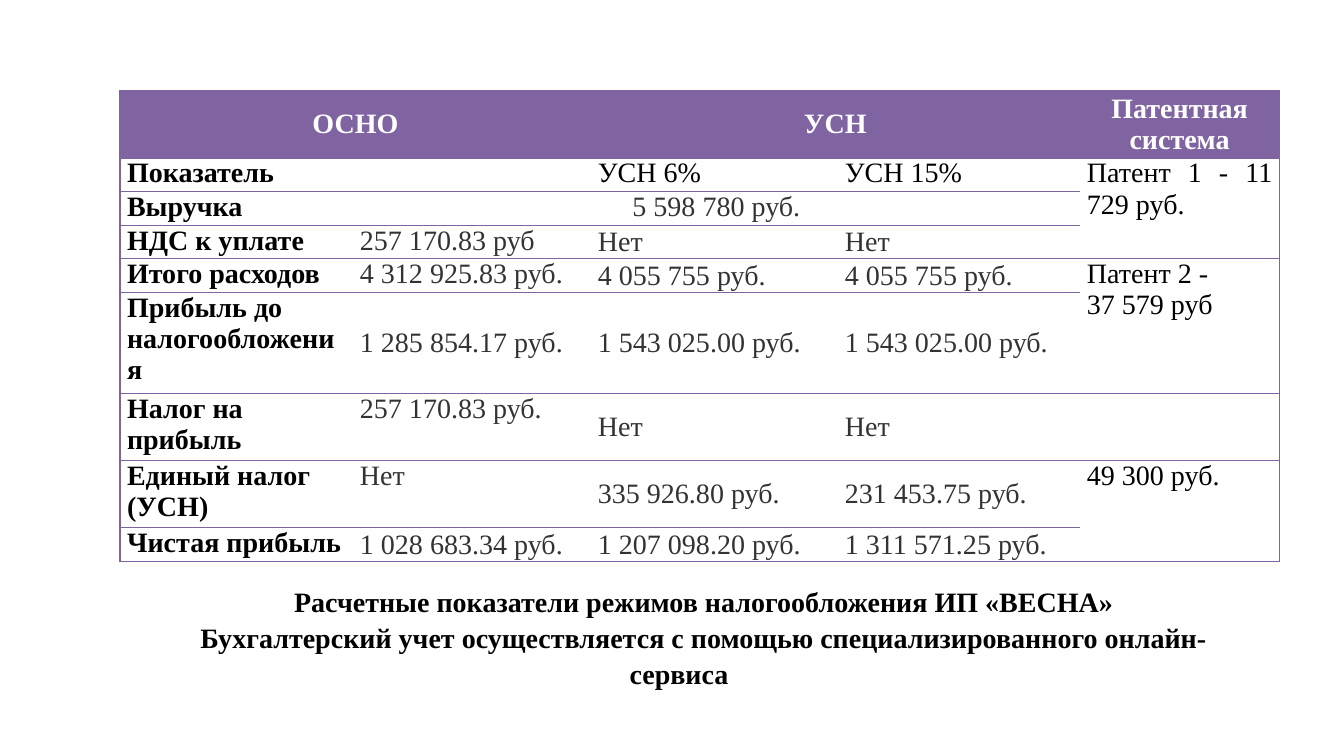
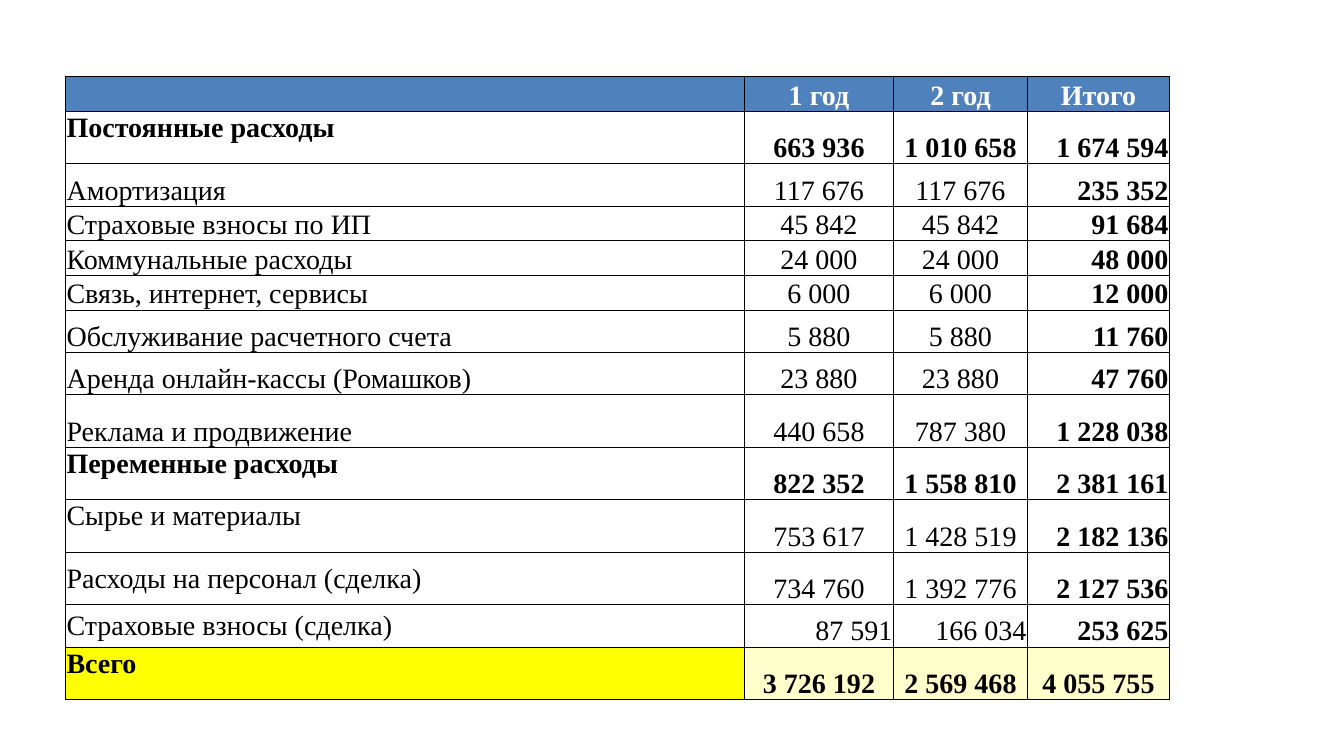
from lxml import etree
from pptx import Presentation
from pptx.dml.color import RGBColor
from pptx.enum.text import MSO_ANCHOR, MSO_AUTO_SIZE, PP_ALIGN
from pptx.oxml.ns import qn
from pptx.util import Inches, Pt

LEFT, CENTER, RIGHT, JUSTIFY = PP_ALIGN.LEFT, PP_ALIGN.CENTER, PP_ALIGN.RIGHT, PP_ALIGN.JUSTIFY
TOP, MIDDLE, BOTTOM = MSO_ANCHOR.TOP, MSO_ANCHOR.MIDDLE, MSO_ANCHOR.BOTTOM
GROW = MSO_AUTO_SIZE.SHAPE_TO_FIT_TEXT

SLIDE_WIDTH, SLIDE_HEIGHT = 13.33, 7.5
FONT, FONT_SIZE = "Times New Roman", 20
PLAIN_STYLE = "{2D5ABB26-0587-4C30-8999-92F81FD0307C}"
COLORS = {
    "white": "FFFFFF",
    "black": "000000",
    "gray": "333333",
    "purple": "8064A2",
    "blue": "4F81BD",
    "yellow": "FFFF00",
    "cream": "FFFFCC",
}

TAX_BOX = (1.19, 0.9, 11.5, 4.67)
TAX_COLUMNS = [2.31, 2.36, 2.45, 2.4, 1.98]
TAX_LINES = [2, 1, 1, 1, 1, 3, 2, 2, 1]
TAX_ROWS = [
    ["ОСНО", "", "УСН", "", "Патентная система"],
    ["Показатель", "", "УСН 6%", "УСН 15%", "Патент 1 - 11 729 руб."],
    ["Выручка", "5 598 780 руб.", "", "", ""],
    ["НДС к уплате", "257 170.83 руб", "Нет", "Нет", ""],
    ["Итого расходов", "4 312 925.83 руб.", "4 055 755 руб.", "4 055 755 руб.",
     "Патент 2 -\n37 579 руб"],
    ["Прибыль до налогообложения", "1 285 854.17 руб.", "1 543 025.00 руб.",
     "1 543 025.00 руб.", ""],
    ["Налог на прибыль", "257 170.83 руб.", "Нет", "Нет", ""],
    ["Единый налог (УСН)", "Нет", "335 926.80 руб.", "231 453.75 руб.", "49 300 руб."],
    ["Чистая прибыль", "1 028 683.34 руб.", "1 207 098.20 руб.", "1 311 571.25 руб.", ""],
]
TAX_MERGES = [
    ((0, 0), (0, 1)),
    ((0, 2), (0, 3)),
    ((1, 0), (1, 1)),
    ((2, 1), (2, 3)),
    ((1, 4), (3, 4)),
    ((4, 4), (5, 4)),
    ((7, 4), (8, 4)),
]
CAPTION_BOX = (0.91, 5.93, 11.65, 0.77)
CAPTION = (
    "Расчетные показатели режимов налогообложения ИП «ВЕСНА»\n"
    "Бухгалтерский учет осуществляется с помощью специализированного онлайн-сервиса"
)

COST_BOX = (0.65, 0.76, 10.95, 6.17)
COST_COLUMNS = [6.74, 1.48, 1.33, 1.41]
COST_HEIGHTS = [0.34, 0.52, 0.42, 0.34, 0.34, 0.34, 0.42, 0.42,
                0.52, 0.52, 0.52, 0.52, 0.42, 0.52]
COST_ROWS = [
    ["", "1 год", "2 год", "Итого"],
    ["Постоянные расходы", "663 936", "1 010 658", "1 674 594"],
    ["Амортизация", "117 676", "117 676", "235 352"],
    ["Страховые взносы по ИП", "45 842", "45 842", "91 684"],
    ["Коммунальные расходы", "24 000", "24 000", "48 000"],
    ["Связь, интернет, сервисы", "6 000", "6 000", "12 000"],
    ["Обслуживание расчетного счета", "5 880", "5 880", "11 760"],
    ["Аренда онлайн-кассы (Ромашков)", "23 880", "23 880", "47 760"],
    ["Реклама и продвижение", "440 658", "787 380", "1 228 038"],
    ["Переменные расходы", "822 352", "1 558 810", "2 381 161"],
    ["Сырье и материалы", "753 617", "1 428 519", "2 182 136"],
    ["Расходы на персонал (сделка)", "734 760", "1 392 776", "2 127 536"],
    ["Страховые взносы (сделка)", "87 591", "166 034", "253 625"],
    ["Всего", "3 726 192", "2 569 468", "4 055 755"],
]
COST_TOTAL = len(COST_ROWS) - 1
COST_GROUPS = (1, 9, COST_TOTAL)


def write(frame, text, color="black", bold=False, align=LEFT, indent=0, spacing=None):
    for index, line in enumerate(text.split("\n")):
        para = frame.add_paragraph() if index else frame.paragraphs[0]
        para.alignment = align
        if spacing:
            para.line_spacing = spacing
        if indent:
            para._p.get_or_add_pPr().set("indent", str(Inches(indent)))
        span = para.add_run()
        span.text = line
        span.font.name = FONT
        span.font.size = Pt(FONT_SIZE)
        span.font.bold = bold
        span.font.color.rgb = RGBColor.from_string(COLORS[color])


def add_borders(cell, sides, color, width):
    properties = cell._tc.get_or_add_tcPr()
    for side in "LRTB":
        if side in sides:
            line = etree.SubElement(properties, qn(f"a:ln{side}"), w=str(Pt(width)))
            fill = etree.SubElement(line, qn("a:solidFill"))
            etree.SubElement(fill, qn("a:srgbClr"), val=COLORS[color])


def set_cell(cell, margins, anchor, fill=None):
    cell.margin_left, cell.margin_top, cell.margin_right, cell.margin_bottom = map(Inches, margins)
    cell.vertical_anchor = anchor
    if fill:
        cell.fill.solid()
        cell.fill.fore_color.rgb = RGBColor.from_string(COLORS[fill])
    else:
        cell.fill.background()


def add_grid(page, box, column_weights, row_weights):
    left, top, width, height = box
    frame = page.shapes.add_table(len(row_weights), len(column_weights), *map(Inches, box))
    table = frame.table
    table.first_row = table.horz_banding = False
    table._tbl.tblPr.find(qn("a:tableStyleId")).text = PLAIN_STYLE
    for column, weight in zip(table.columns, column_weights):
        column.width = Inches(width * weight / sum(column_weights))
    for row, weight in zip(table.rows, row_weights):
        row.height = Inches(height * weight / sum(row_weights))
    return table


def tax_sides(row, column):
    last_column = len(TAX_COLUMNS) - 1
    lined = (0, 3, 5, 8) if column == last_column else (0, 1, 2, 3, 4, 5, 7, 8)
    ends = {start: end[0] for start, end in TAX_MERGES}
    bottom_row = ends.get((row, column), row)
    sides = "L" if column == 0 else "R" if column == last_column else ""
    if row == 0 or row - 1 in lined:
        sides += "T"
    if bottom_row in lined:
        sides += "B"
    return sides


def tax_format(row, column):
    if row == 0:
        return MIDDLE, dict(color="white", bold=True, align=CENTER)
    if column == 0:
        return TOP, dict(bold=True)
    if column == 4:
        return TOP, dict(align=JUSTIFY)
    if row == 1:
        return TOP, {}
    centered = row in (5, 8) or (column > 1 and row > 2)
    return MIDDLE if centered else TOP, dict(color="gray", align=CENTER if row == 2 else LEFT)


def add_tax_table(page, box):
    table = add_grid(page, box, TAX_COLUMNS, TAX_LINES)
    for start, end in TAX_MERGES:
        table.cell(*start).merge(table.cell(*end))
    for row, texts in enumerate(TAX_ROWS):
        for column, text in enumerate(texts):
            cell = table.cell(row, column)
            anchor, style = tax_format(row, column)
            add_borders(cell, tax_sides(row, column), "purple", 1)
            set_cell(cell, (0.07, 0, 0.07, 0), anchor, None if row else "purple")
            if text:
                write(cell.text_frame, text, **style)


def add_caption(page, box):
    frame = page.shapes.add_textbox(*map(Inches, box)).text_frame
    frame.word_wrap = True
    frame.auto_size = GROW
    frame.vertical_anchor = MIDDLE
    write(frame, CAPTION, bold=True, align=CENTER, indent=0.49, spacing=1.07)


def cost_format(row, column):
    anchor, align = BOTTOM, CENTER
    if column == 0:
        raised = row in COST_GROUPS or row == 10
        align = JUSTIFY if raised else LEFT
        anchor = TOP if raised else MIDDLE if row in (11, 12) else BOTTOM
    elif row == 12 or (column == 3 and row not in (0, COST_TOTAL)):
        align = RIGHT
    bold = row == 0 or row in COST_GROUPS or column == 3
    return anchor, dict(color="black" if row else "white", bold=bold, align=align)


def cost_fill(row, column):
    if row == 0:
        return "blue"
    if row == COST_TOTAL:
        return "cream" if column else "yellow"
    return None


def add_cost_table(page, box):
    table = add_grid(page, box, COST_COLUMNS, COST_HEIGHTS)
    for row, texts in enumerate(COST_ROWS):
        for column, text in enumerate(texts):
            cell = table.cell(row, column)
            anchor, style = cost_format(row, column)
            add_borders(cell, "LRTB", "black", 0.5)
            set_cell(cell, (0.01, 0.01, 0.01, 0), anchor, cost_fill(row, column))
            if text:
                write(cell.text_frame, text, **style)


def main():
    deck = Presentation()
    deck.slide_width, deck.slide_height = Inches(SLIDE_WIDTH), Inches(SLIDE_HEIGHT)
    blank = deck.slide_layouts[6]
    tax_page = deck.slides.add_slide(blank)
    add_tax_table(tax_page, TAX_BOX)
    add_caption(tax_page, CAPTION_BOX)
    add_cost_table(deck.slides.add_slide(blank), COST_BOX)
    deck.save("out.pptx")


if __name__ == "__main__":
    main()
